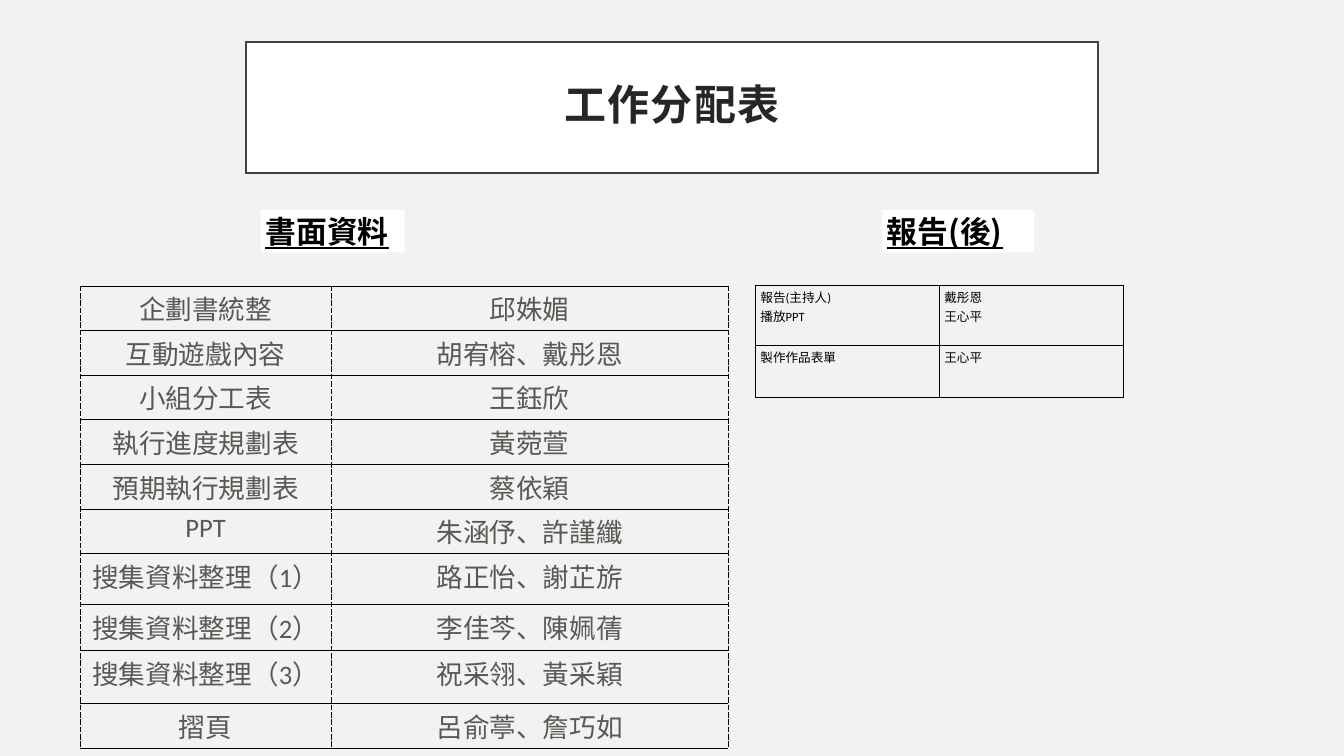
"""Build the work allocation slide with its two duty tables."""
from lxml.etree import SubElement
from pptx import Presentation
from pptx.dml.color import RGBColor
from pptx.enum.shapes import MSO_SHAPE
from pptx.enum.text import MSO_ANCHOR, PP_ALIGN
from pptx.oxml.ns import qn
from pptx.util import Inches, Pt

TITLE = "工作分配表"
HEADINGS = [("書面資料", 5.17, 2.86), ("報告(後)", 17.5, 3.02)]
DOCUMENT_DUTIES = [
    ("企劃書統整", "邱姝媚"),
    ("互動遊戲內容", "胡宥榕、戴彤恩"),
    ("小組分工表", "王鈺欣"),
    ("執行進度規劃表", "黃菀萱"),
    ("預期執行規劃表", "蔡依穎"),
    ("PPT", "朱涵伃、許謹纖"),
    ("搜集資料整理（1）", "路正怡、謝芷旂"),
    ("搜集資料整理（2）", "李佳芩、陳姵蒨"),
    ("搜集資料整理（3）", "祝采翎、黃采穎"),
    ("摺頁", "呂俞葶、詹巧如"),
]
REPORT_DUTIES = [
    ("報告(主持人)\n播放PPT", "戴彤恩\n王心平"),
    ("製作作品表單", "王心平"),
]

SLIDE_WIDTH, SLIDE_HEIGHT = 26.67, 15
TITLE_WIDTH = 16.91
HEADING_TOP, HEADING_HEIGHT = 4.17, 0.84
TABLE_TOP = 5.67
DOCUMENT_ROWS = [0.85] * 6 + [1.01, 0.91, 1.05, 0.85]

LATIN_FONT = "Calibri"
CHINESE_FONT = "Noto Sans CJK SC"
BACKGROUND = RGBColor(0xF2, 0xF2, 0xF2)
WHITE = RGBColor(0xFF, 0xFF, 0xFF)
BLACK = RGBColor(0, 0, 0)
FRAME = RGBColor(0x40, 0x40, 0x40)
TITLE_INK = RGBColor(0x26, 0x26, 0x26)
DUTY_INK = RGBColor(0x5B, 0x58, 0x54)


def format_text(text_frame, size, color, align, latin=LATIN_FONT, chinese=CHINESE_FONT,
                bold=False, underline=False):
    for paragraph in text_frame.paragraphs:
        paragraph.alignment = align
        for run in paragraph.runs:
            font = run.font
            font.name, font.size, font.bold, font.underline = latin, Pt(size), bold, underline
            font.color.rgb = color
            SubElement(run._r.get_or_add_rPr(), qn("a:ea")).set("typeface", chinese)


def add_box(slide, text, left, top, width, height):
    box = slide.shapes.add_shape(
        MSO_SHAPE.RECTANGLE, Inches(left), Inches(top), Inches(width), Inches(height))
    box.shadow.inherit = False
    box.fill.solid()
    box.fill.fore_color.rgb = WHITE
    box.line.fill.background()
    box.text_frame.text = text
    return box


def add_title(slide):
    box = add_box(slide, TITLE, (SLIDE_WIDTH - TITLE_WIDTH) / 2, 0.83, TITLE_WIDTH, 2.6)
    box.line.color.rgb = FRAME
    box.line.width = Pt(2.5)
    SubElement(box.line._get_or_add_ln(), qn("a:miter"), lim="800000")
    frame = box.text_frame
    frame.vertical_anchor = MSO_ANCHOR.MIDDLE
    frame.margin_left = frame.margin_right = frame.margin_top = frame.margin_bottom = Inches(0.2)
    format_text(frame, 60, TITLE_INK, PP_ALIGN.CENTER, chinese=LATIN_FONT, bold=True)
    paragraph = frame.paragraphs[0]
    paragraph.line_spacing = 0.9
    paragraph.runs[0]._r.get_or_add_rPr().set("spc", "200")


def add_heading(slide, text, left, width):
    frame = add_box(slide, text, left, HEADING_TOP, width, HEADING_HEIGHT).text_frame
    frame.word_wrap = False
    frame.vertical_anchor = MSO_ANCHOR.TOP
    format_text(frame, 44, BLACK, PP_ALIGN.LEFT, latin=CHINESE_FONT, bold=True, underline=True)


def set_borders(cell, width, side_dash):
    properties = cell._tc.get_or_add_tcPr()
    for side, dash in (("L", side_dash), ("R", side_dash), ("T", "solid"), ("B", "solid")):
        line = SubElement(properties, qn(f"a:ln{side}"), w=str(Pt(width)))
        fill = SubElement(line, qn("a:solidFill"))
        SubElement(fill, qn("a:srgbClr"), val=str(BLACK))
        SubElement(line, qn("a:prstDash"), val=dash)


def add_duty_table(slide, duties, left, columns, rows, size, color, align, border, side_dash, margins):
    table = slide.shapes.add_table(
        len(rows), len(columns), Inches(left), Inches(TABLE_TOP),
        Inches(sum(columns)), Inches(sum(rows))).table
    table.first_row = table.horz_banding = False
    for column, width in zip(table.columns, columns):
        column.width = Inches(width)
    for row, height, texts in zip(table.rows, rows, duties):
        row.height = Inches(height)
        for cell, text in zip(row.cells, texts):
            cell.text_frame.text = text
            cell.margin_left = cell.margin_right = Inches(margins[0])
            cell.margin_top = cell.margin_bottom = Inches(margins[1])
            format_text(cell.text_frame, size, color, align)
            set_borders(cell, border, side_dash)
            cell.fill.background()


def main():
    presentation = Presentation()
    presentation.slide_width = Inches(SLIDE_WIDTH)
    presentation.slide_height = Inches(SLIDE_HEIGHT)
    slide = presentation.slides.add_slide(presentation.slide_layouts[6])
    slide.background.fill.solid()
    slide.background.fill.fore_color.rgb = BACKGROUND
    add_title(slide)
    add_duty_table(slide, DOCUMENT_DUTIES, 1.59, [4.98, 7.88], DOCUMENT_ROWS, 38, DUTY_INK,
                   PP_ALIGN.CENTER, 0.5, "dash", (0.06, 0.06))
    add_duty_table(slide, REPORT_DUTIES, 14.99, [3.65, 3.65], [1.18, 1.03], 18, BLACK,
                   PP_ALIGN.LEFT, 1, "solid", (0.1, 0.05))
    for text, left, width in HEADINGS:
        add_heading(slide, text, left, width)
    presentation.save("out.pptx")


if __name__ == "__main__":
    main()
